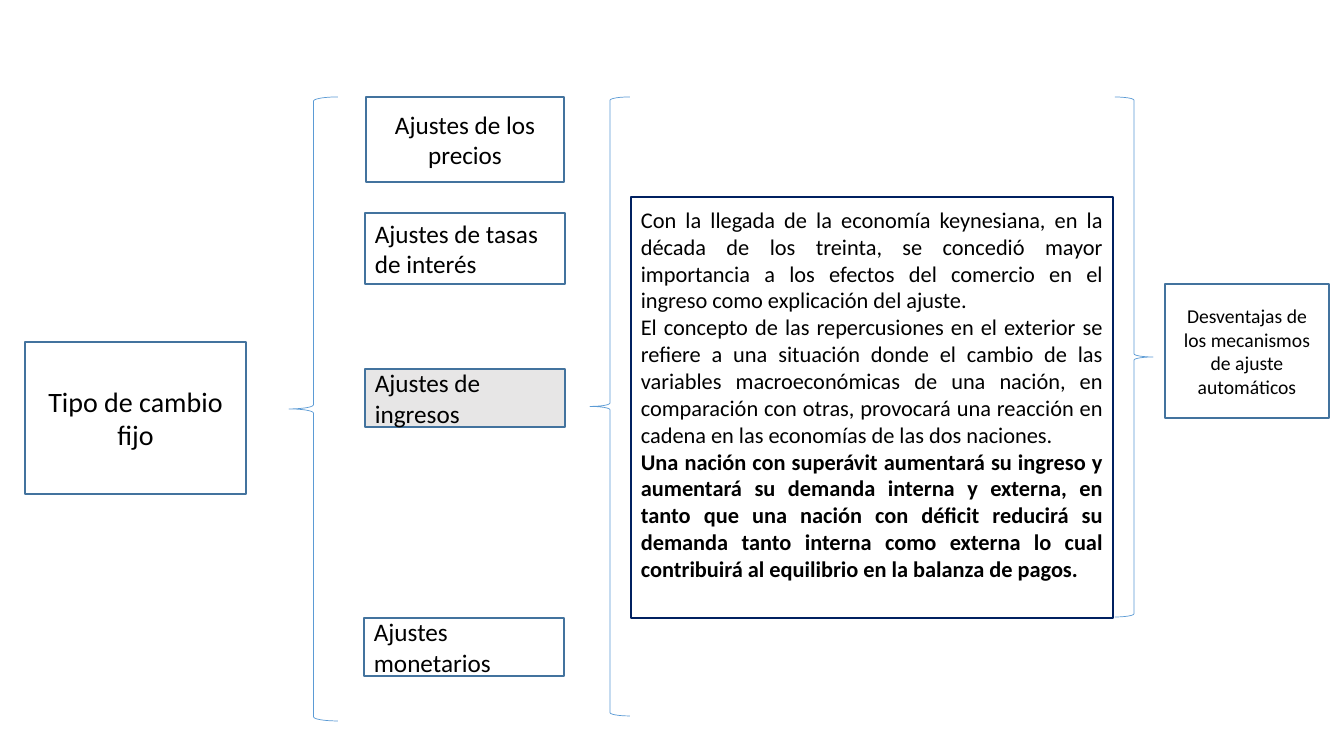
from pptx import Presentation
from pptx.dml.color import RGBColor
from pptx.enum.shapes import MSO_SHAPE as SHAPE
from pptx.enum.text import MSO_ANCHOR as ANCHOR, PP_ALIGN as ALIGN
from pptx.util import Pt

EMU_PER_PX = 914400 / 100.8
COLORS = {
    "text": "000000",
    "white": "FFFFFF",
    "highlight": "E7E6E6",
    "border": "43739E",
    "navy": "002060",
    "brace": "5B9BD5",
}


def px(n):
    return round(n * EMU_PER_PX)


def add_outlined(kind, box, line, width):
    s = slide.shapes.add_shape(kind, *map(px, box))
    s.shadow.inherit = False
    s.line.color.rgb = RGBColor.from_string(COLORS[line])
    s.line.width = Pt(width)
    return s


prs = Presentation()
prs.slide_width, prs.slide_height = px(1344), px(756)
slide = prs.slides.add_slide(prs.slide_layouts[6])

explanation = [
    "Con la llegada de la economía keynesiana, en la década de los treinta, se concedió mayor "
    "importancia a los efectos del comercio en el ingreso como explicación del ajuste.",
    "El concepto de las repercusiones en el exterior se refiere a una situación donde el cambio "
    "de las variables macroeconómicas de una nación, en comparación con otras, provocará una "
    "reacción en cadena en las economías de las dos naciones.",
    "Una nación con superávit aumentará su ingreso y aumentará su demanda interna y externa, en "
    "tanto que una nación con déficit reducirá su demanda tanto interna como externa lo cual "
    "contribuirá al equilibrio en la balanza de pagos.",
]

# (left, top, width, height), fill, line, font size, alignment, paragraphs
boxes = [
    ((25, 342, 221, 152), "white", "border", 20, ALIGN.CENTER, ["Tipo de cambio fijo"]),
    ((366, 97, 198, 85), "white", "border", 18, ALIGN.CENTER, ["Ajustes de los precios"]),
    ((365, 213, 200, 71), "white", "border", 18, ALIGN.LEFT, ["Ajustes de tasas de interés"]),
    ((365, 369, 200, 58), "highlight", "border", 18, ALIGN.LEFT, ["Ajustes de ingresos"]),
    ((364, 618, 200, 58), "white", "border", 18, ALIGN.LEFT, ["Ajustes monetarios"]),
    ((631, 197, 482, 421), "white", "navy", 16, ALIGN.JUSTIFY, explanation),
    ((1165, 284, 164, 134), "white", "border", 14, ALIGN.CENTER,
     ["Desventajas de los mecanismos de ajuste automáticos"]),
]
for box, fill, line, size, align, paragraphs in boxes:
    s = add_outlined(SHAPE.RECTANGLE, box, line, 1)
    s.fill.solid()
    s.fill.fore_color.rgb = RGBColor.from_string(COLORS[fill])
    tf = s.text_frame
    tf.word_wrap = True
    tf.vertical_anchor = ANCHOR.MIDDLE
    tf.text = "\n".join(paragraphs)
    for p in tf.paragraphs:
        p.alignment = align
        p.font.name = "Calibri"
        p.font.size = Pt(size)
        p.font.color.rgb = RGBColor.from_string(COLORS["text"])
    if paragraphs is explanation:
        p.font.bold = True  # the conclusion
        tf.margin_bottom = px(32)

braces = [
    (SHAPE.LEFT_BRACE, (289, 97, 49, 624)),
    (SHAPE.LEFT_BRACE, (590, 97, 40, 619)),
    (SHAPE.RIGHT_BRACE, (1115, 97, 38, 520)),
]
for kind, box in braces:
    add_outlined(kind, box, "brace", 0.5).fill.background()

prs.save("out.pptx")
